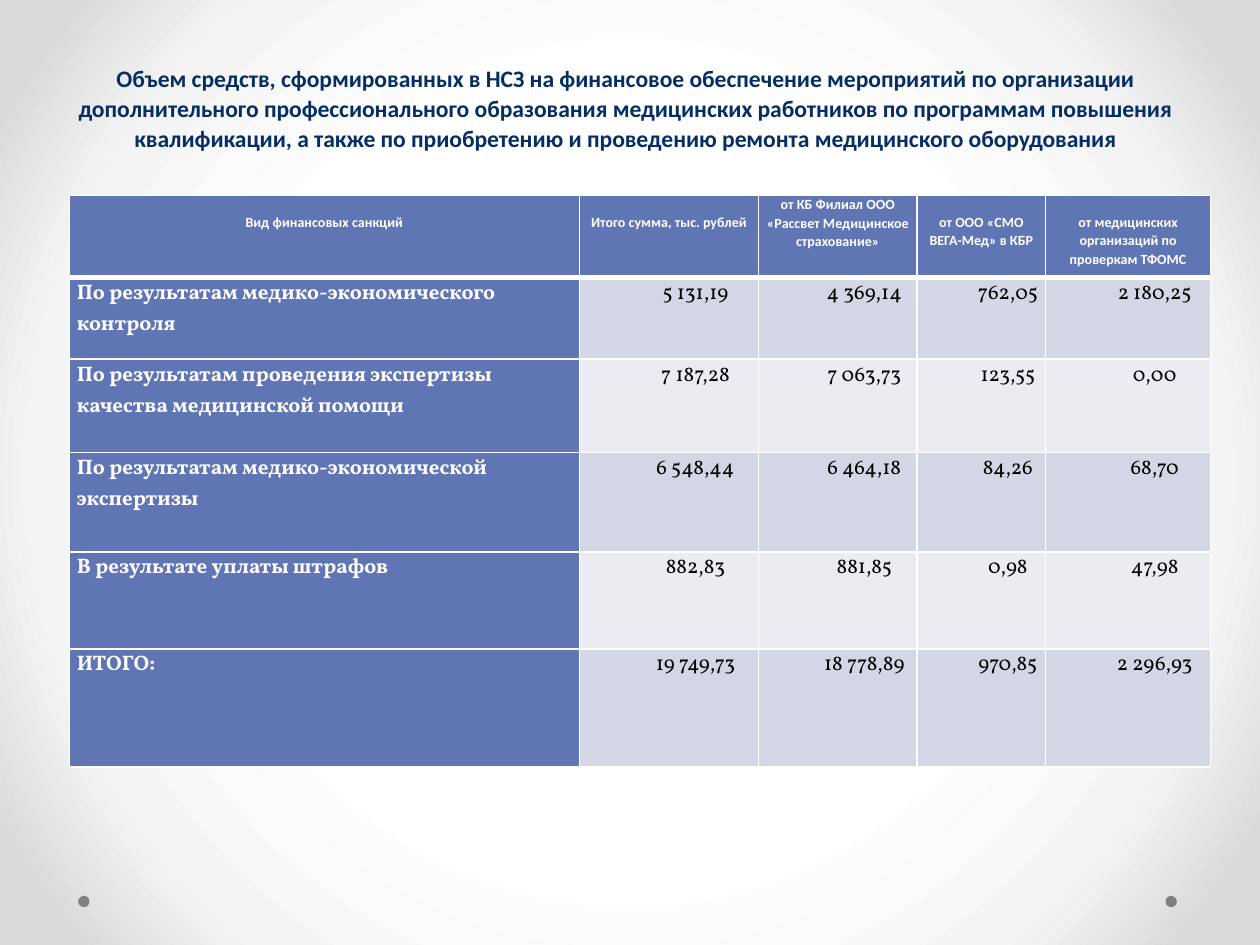
from dataclasses import dataclass

from lxml.etree import SubElement
from pptx import Presentation
from pptx.dml.color import RGBColor
from pptx.enum.shapes import MSO_SHAPE
from pptx.enum.text import MSO_ANCHOR, MSO_AUTO_SIZE, PP_ALIGN
from pptx.oxml.ns import qn
from pptx.util import Inches, Pt


@dataclass(frozen=True)
class Theme:
    """Colours, fonts and type sizes of the slide."""
    title: str = "052E65"
    accent: str = "6076B4"
    bands: tuple = ("D2D6E5", "EAECF2")
    white: str = "FFFFFF"
    black: str = "000000"
    dot: str = "808080"
    backdrop: tuple = ((50, "FFFFFF"), (76, "F4F4F4"), (92, "DADADA"))
    head_font: str = "Calibri"
    body_font: str = "Vollkorn"
    title_size: float = 13.5
    head_size: float = 8
    body_size: float = 12
    line_spacing: float = 1.07


THEME = Theme()

TITLE = ("Объем средств, сформированных в НСЗ на финансовое обеспечение мероприятий "
         "по организации дополнительного профессионального образования медицинских "
         "работников по программам повышения квалификации, а также по приобретению "
         "и проведению ремонта медицинского оборудования")
HEADERS = ["Вид финансовых санкций",
           "Итого сумма, тыс. рублей",
           "от КБ Филиал ООО «Рассвет Медицинское страхование»",
           "от ООО «СМО ВЕГА-Мед» в КБР",
           "от медицинских организаций по проверкам ТФОМС"]
ROWS = [
    ["По результатам медико-экономического контроля",
     "5 131,19", "4 369,14", "762,05", "2 180,25"],
    ["По результатам проведения экспертизы качества медицинской помощи",
     "7 187,28", "7 063,73", "123,55", "0,00"],
    ["По результатам медико-экономической экспертизы",
     "6 548,44", "6 464,18", "84,26", "68,70"],
    ["В результате уплаты штрафов", "882,83", "881,85", "0,98", "47,98"],
    ["ИТОГО:", "19 749,73", "18 778,89", "970,85", "2 296,93"],
]
COL_WIDTHS = [4.05, 1.42, 1.26, 1.02, 1.31]
ROW_HEIGHTS = [0.65, 0.65, 0.74, 0.79, 0.77, 0.94]
TALL_HEADER = 2


def set_text(tf, text, font, size, color, bold, align):
    """Write one formatted paragraph and return it."""
    tf.text = text
    p = tf.paragraphs[0]
    p.alignment = align
    p.line_spacing = THEME.line_spacing
    f = p.runs[0].font
    f.name, f.size, f.bold = font, Pt(size), bold
    f.color.rgb = RGBColor.from_string(color)
    return p


def set_background(s):
    """Fill the slide with a circular gradient around its centre."""
    s.background.fill.gradient()
    grad = next(s.background._cSld.iter(qn("a:gradFill")))
    for child in list(grad):
        grad.remove(child)
    stops = SubElement(grad, qn("a:gsLst"))
    for pos, color in THEME.backdrop:
        gs = SubElement(stops, qn("a:gs"), pos=str(pos * 1000))
        SubElement(gs, qn("a:srgbClr"), val=color)
    circle = SubElement(grad, qn("a:path"), path="circle")
    SubElement(circle, qn("a:fillToRect"), dict.fromkeys("ltrb", "50000"))


def add_dot(s, left):
    """Add a small decorative dot near the bottom edge."""
    sp = s.shapes.add_shape(MSO_SHAPE.OVAL, Inches(left), Inches(7.11),
                            Inches(0.09), Inches(0.09))
    sp.shadow.inherit = False
    sp.fill.solid()
    sp.fill.fore_color.rgb = RGBColor.from_string(THEME.dot)
    sp.line.fill.background()


def set_title(s):
    """Place and format the title placeholder."""
    sp = s.shapes.title
    sp.left, sp.top = Inches(0.12), Inches(0.44)
    sp.width, sp.height = Inches(9.69), Inches(0.83)
    tf = sp.text_frame
    tf.word_wrap = True
    tf.auto_size = MSO_AUTO_SIZE.NONE
    tf.vertical_anchor = MSO_ANCHOR.TOP
    set_text(tf, TITLE, THEME.head_font, THEME.title_size, THEME.title, True,
             PP_ALIGN.CENTER)


def set_borders(cell, top, bottom):
    """Draw white cell borders, with top and bottom widths in points."""
    tcPr = cell._tc.get_or_add_tcPr()
    for side, width in (("L", 1), ("R", 1), ("T", top), ("B", bottom)):
        ln = SubElement(tcPr, qn(f"a:ln{side}"), w=str(Pt(width)))
        fill = SubElement(ln, qn("a:solidFill"))
        SubElement(fill, qn("a:srgbClr"), val=THEME.white)


def style_cell(cell, fill, top=1, bottom=1):
    """Set the margins, borders and fill of a cell."""
    cell.margin_left = cell.margin_right = Inches(0.06)
    cell.margin_top = cell.margin_bottom = 0
    set_borders(cell, top, bottom)
    cell.fill.solid()
    cell.fill.fore_color.rgb = RGBColor.from_string(fill)


def fill_header(cell, text, col):
    """Write a column heading, one line lower unless it is the tall one."""
    style_cell(cell, THEME.accent, bottom=3)
    cell.margin_top = Inches(0 if col == TALL_HEADER else 0.14)
    set_text(cell.text_frame, text, THEME.head_font, THEME.head_size,
             THEME.white, True, PP_ALIGN.CENTER)


def fill_body(cell, text, row, col):
    """Write a row label or an amount."""
    label = col == 0
    fill = THEME.accent if label else THEME.bands[(row - 1) % 2]
    style_cell(cell, fill, top=3 if row == 1 else 1)
    p = set_text(cell.text_frame, text, THEME.body_font, THEME.body_size,
                 THEME.white if label else THEME.black, label,
                 PP_ALIGN.LEFT if label else PP_ALIGN.CENTER)
    if not label:
        p._p.get_or_add_pPr().set("marL", str(Inches(0.42)))


def add_sanctions_table(s):
    """Add the table of amounts by kind of sanction."""
    table = s.shapes.add_table(len(ROW_HEIGHTS), len(COL_WIDTHS),
                               Inches(0.55), Inches(1.55),
                               Inches(sum(COL_WIDTHS)),
                               Inches(sum(ROW_HEIGHTS))).table
    for column, width in zip(table.columns, COL_WIDTHS):
        column.width = Inches(width)
    for row, height in zip(table.rows, ROW_HEIGHTS):
        row.height = Inches(height)
    for col, text in enumerate(HEADERS):
        fill_header(table.cell(0, col), text, col)
    for row, values in enumerate(ROWS, start=1):
        for col, text in enumerate(values):
            fill_body(table.cell(row, col), text, row, col)


def main():
    """Build the slide and save it."""
    prs = Presentation()
    prs.slide_width, prs.slide_height = Inches(10), Inches(7.5)
    s = prs.slides.add_slide(prs.slide_layouts[5])
    set_background(s)
    for left in (9.25, 0.62):
        add_dot(s, left)
    set_title(s)
    add_sanctions_table(s)
    prs.save("out.pptx")


if __name__ == "__main__":
    main()
